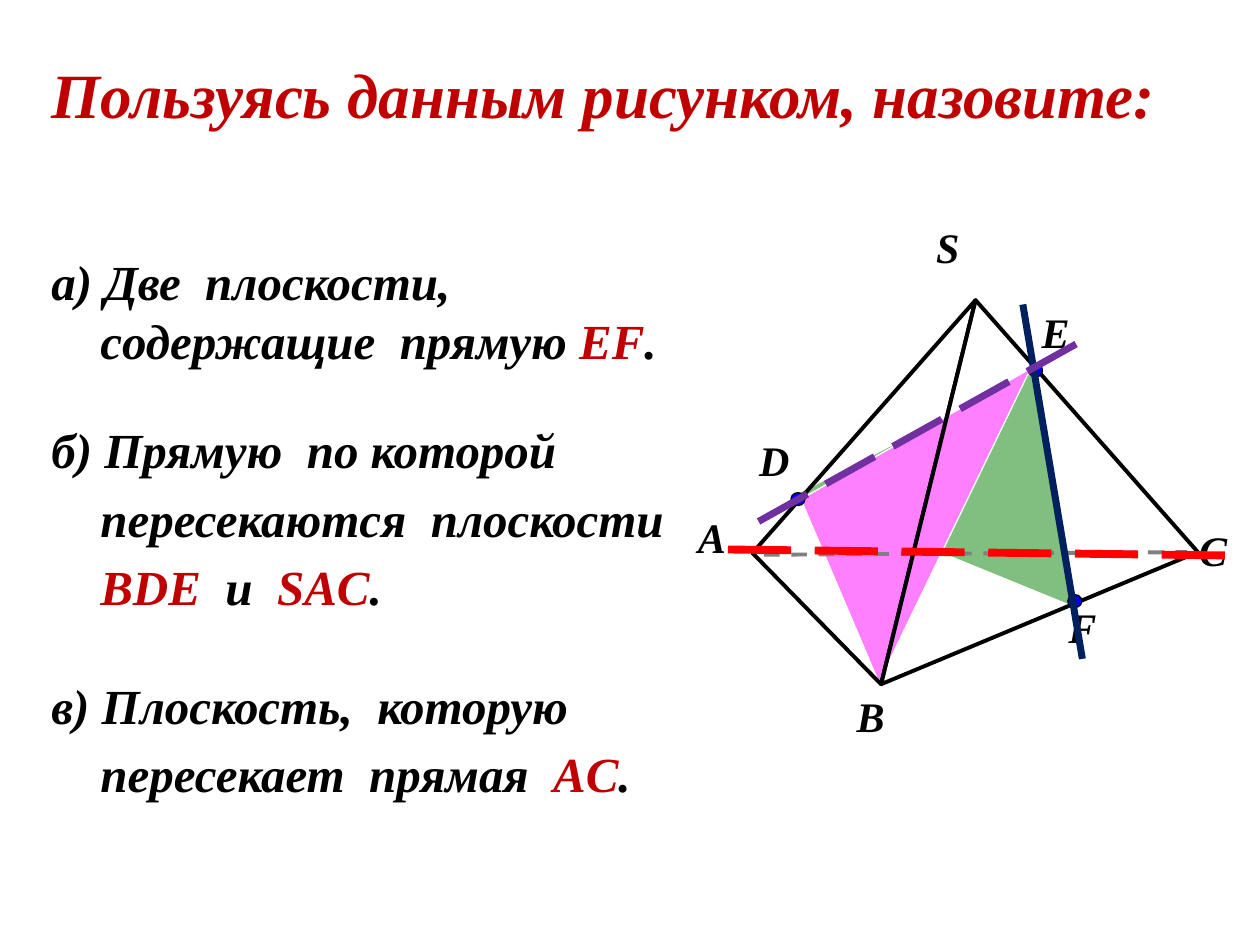
from dataclasses import dataclass

from lxml.etree import SubElement
from pptx import Presentation
from pptx.dml.color import RGBColor
from pptx.enum.dml import MSO_LINE
from pptx.enum.shapes import MSO_CONNECTOR, MSO_SHAPE
from pptx.enum.text import MSO_AUTO_SIZE
from pptx.oxml.ns import qn
from pptx.util import Pt

Point = tuple[float, float]


@dataclass(frozen=True)
class Theme:
    font: str = "Times New Roman"
    title_size: float = 36
    body_size: float = 28
    label_size: float = 24
    black: str = "000000"
    white: str = "FFFFFF"
    accent: str = "C00000"
    green: str = "008000"
    pink: str = "FF00FF"
    blue: str = "0000FF"
    navy: str = "002060"
    purple: str = "7030A0"
    red: str = "FF0000"


@dataclass(frozen=True)
class Span:
    text: str
    color: str


@dataclass(frozen=True)
class TextBlock:
    left: float
    top: float
    width: float
    height: float
    size: float
    lines: list[list[Span]]
    space_before: float = 0
    indent: float = 0
    wrap: bool = False


@dataclass(frozen=True)
class Triangle:
    points: list[Point]
    fill: str
    outline: str
    outline_width: float
    closed: bool = False
    opacity: int = 100


@dataclass(frozen=True)
class Segment:
    start: Point
    end: Point
    color: str
    width: float
    dash: MSO_LINE | None = None


@dataclass(frozen=True)
class Label:
    text: str
    left: float
    top: float


THEME = Theme()


def black(text: str) -> Span:
    return Span(text, THEME.black)


def accent(text: str) -> Span:
    return Span(text, THEME.accent)


def draw_text(page, block: TextBlock) -> None:
    box = page.shapes.add_textbox(Pt(block.left), Pt(block.top), Pt(block.width), Pt(block.height))
    frame = box.text_frame
    frame.word_wrap = block.wrap
    frame.auto_size = MSO_AUTO_SIZE.SHAPE_TO_FIT_TEXT
    for number, spans in enumerate(block.lines):
        para = frame.add_paragraph() if number else frame.paragraphs[0]
        para.space_before = Pt(block.space_before)
        if number and block.indent:
            para._p.get_or_add_pPr().set("marL", str(Pt(block.indent)))
        for span in spans:
            run = para.add_run()
            run.text = span.text
            run.font.name = THEME.font
            run.font.size = Pt(block.size)
            run.font.bold = True
            run.font.italic = True
            run.font.color.rgb = RGBColor.from_string(span.color)


def paint(shape, fill: str, outline: str, outline_width: float) -> None:
    shape.shadow.inherit = False
    shape.fill.solid()
    shape.fill.fore_color.rgb = RGBColor.from_string(fill)
    shape.line.color.rgb = RGBColor.from_string(outline)
    shape.line.width = Pt(outline_width)


def draw_triangle(page, triangle: Triangle) -> None:
    first, *rest = [(Pt(x), Pt(y)) for x, y in triangle.points]
    builder = page.shapes.build_freeform(*first)
    builder.add_line_segments(rest, close=triangle.closed)
    shape = builder.convert_to_shape()
    paint(shape, triangle.fill, triangle.outline, triangle.outline_width)
    if triangle.opacity < 100:
        color = shape._element.spPr.find(qn("a:solidFill")).find(qn("a:srgbClr"))
        SubElement(color, qn("a:alpha")).set("val", str(triangle.opacity * 1000))


def draw_segment(page, segment: Segment) -> None:
    ends = [Pt(value) for value in (*segment.start, *segment.end)]
    connector = page.shapes.add_connector(MSO_CONNECTOR.STRAIGHT, *ends)
    connector.line.color.rgb = RGBColor.from_string(segment.color)
    connector.line.width = Pt(segment.width)
    if segment.dash:
        connector.line.dash_style = segment.dash
    SubElement(connector._element.spPr, qn("a:effectLst"))


def draw_dot(page, center: Point) -> None:
    width, height = 8, 7.4
    x, y = center
    dot = page.shapes.add_shape(
        MSO_SHAPE.OVAL, Pt(x - width / 2), Pt(y - height / 2), Pt(width), Pt(height)
    )
    paint(dot, THEME.blue, THEME.black, 0.75)


def draw_label(page, label: Label) -> None:
    lines = [[black(label.text)]]
    draw_text(page, TextBlock(label.left, label.top, 31, 36, THEME.label_size, lines))


APEX, LEFT, FRONT, RIGHT = (557.5, 171.5), (430, 316), (503.5, 391), (684.5, 315.5)

SECTIONS = [
    Triangle([(456, 282), (592.5, 211.5), (614, 346.5)], THEME.green, THEME.white, 0.75),
    Triangle([(458, 285), (589, 210.5), (502.5, 389.5)], THEME.pink, THEME.white, 0.75),
]
FACES = [
    Triangle([LEFT, FRONT, APEX], THEME.white, THEME.black, 2.25, True, 50),
    Triangle([FRONT, APEX, RIGHT], THEME.white, THEME.black, 2.25, True, 50),
]
HIDDEN_EDGE = Segment((436.5, 317), (678.5, 315.5), THEME.black, 2.25, MSO_LINE.DASH)
LABELS = [
    Label("S", 527.8, 123),
    Label("В", 482.4, 391),
    Label("А", 391.7, 288.7),
    Label("С", 678.2, 296),
    Label("F", 603.4, 340),
    Label("E", 588.2, 171.4),
    Label("D", 426.7, 244.8),
]
DOTS = [(456, 285.2), (591.8, 211.7), (614.2, 343.5)]
LINES = [
    Segment((618.5, 376.5), (584.5, 174), THEME.navy, 4),
    Segment((433.5, 298), (620.5, 193.5), THEME.purple, 4, MSO_LINE.LONG_DASH),
    Segment((416, 314), (708.5, 317.5), THEME.red, 4.5, MSO_LINE.LONG_DASH),
]
TEXTS = [
    TextBlock(22.3, 140.4, 361, 75, THEME.body_size, [
        [black("а) Две  плоскости,")],
        [black("cодержащие  прямую "), accent("EF"), black(".")],
    ], indent=28),
    TextBlock(22.3, 236.2, 382, 122.4, THEME.body_size, [
        [black("б) Прямую  по которой")],
        [black("пересекаются  плоскости")],
        [accent("BDЕ  "), black("и  "), accent("SAC"), black(".")],
    ], space_before=5.6, indent=28),
    TextBlock(22.3, 382.3, 355, 82, THEME.body_size, [
        [black("в) Плоскость,  которую")],
        [black("пересекает  прямая  "), accent("AC"), black(".")],
    ], space_before=5.6, indent=28),
    TextBlock(22.3, 28, 680.4, 51, THEME.title_size, [
        [accent("Пользуясь данным рисунком, назовите:")],
    ], wrap=True),
]


def main() -> None:
    deck = Presentation()
    deck.slide_width, deck.slide_height = Pt(720), Pt(540)
    page = deck.slides.add_slide(deck.slide_layouts[6])
    for section in SECTIONS:
        draw_triangle(page, section)
    draw_segment(page, HIDDEN_EDGE)
    for face in FACES:
        draw_triangle(page, face)
    for label in LABELS:
        draw_label(page, label)
    for center in DOTS:
        draw_dot(page, center)
    for line in LINES:
        draw_segment(page, line)
    for block in TEXTS:
        draw_text(page, block)
    deck.save("out.pptx")


if __name__ == "__main__":
    main()
